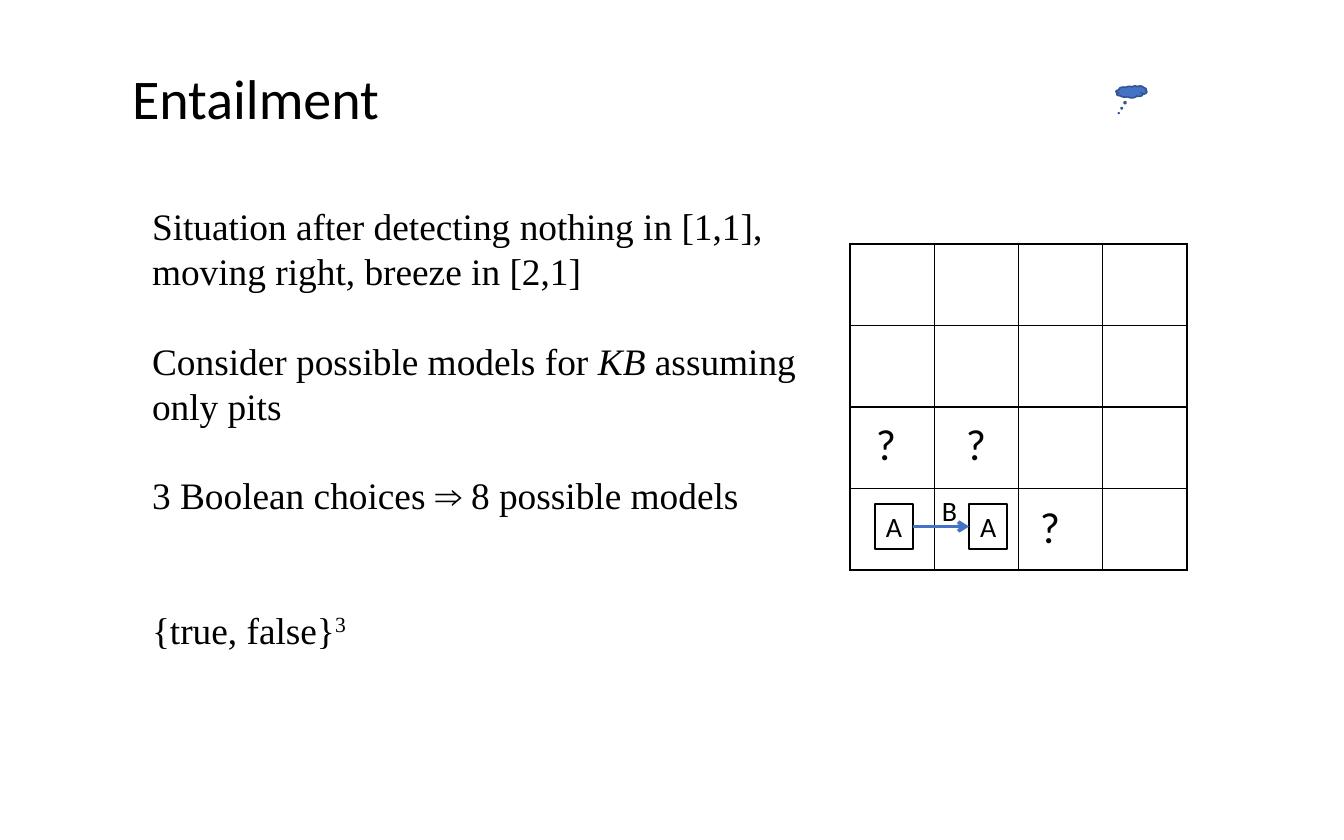
from dataclasses import dataclass

from lxml import etree
from pptx import Presentation
from pptx import util as u
from pptx.dml.color import RGBColor
from pptx.enum import shapes, text
from pptx.oxml.ns import qn

PX = 914400 / 112  # EMU per px


@dataclass(frozen=True)
class Theme:
    ink: str = "000000"
    paper: str = "FFFFFF"
    accent: str = "4472C4"
    accent_edge: str = "325491"
    sans: str = "Calibri"
    serif: str = "Times New Roman"
    title: int = 36
    body: int = 24
    label: int = 18
    mark: int = 28
    body_pitch: float = 28.8


def px(*lengths):
    return [u.Emu(round(length * PX)) for length in lengths]


def write(paragraph, words, size, font, color, italic=False, raised=False):
    run = paragraph.add_run()
    run.text = words
    run.font.size = u.Pt(size)
    run.font.name = font
    run.font.color.rgb = RGBColor.from_string(color)
    if italic:
        run.font.italic = True
    if raised:
        run.font._element.set("baseline", "30000")


class SlideBuilder:
    def __init__(self, slide, theme):
        self.shapes = slide.shapes
        self.theme = theme

    def fit(self, shape, wrap=True):
        frame = shape.text_frame
        frame.word_wrap = wrap
        frame.auto_size = text.MSO_AUTO_SIZE.SHAPE_TO_FIT_TEXT
        frame.vertical_anchor = text.MSO_ANCHOR.TOP
        return frame

    def text_line(self, box, words, size, wrap=True):
        frame = self.fit(self.shapes.add_textbox(*px(*box)), wrap)
        write(frame.paragraphs[0], words, size, self.theme.sans, self.theme.ink)

    def body(self, box, statements):
        """Each statement is (blank lines above, [(words, run format), ...])."""
        t = self.theme
        frame = self.fit(self.shapes.add_textbox(*px(*box)))
        for i, (lines_above, runs) in enumerate(statements):
            paragraph = frame.add_paragraph() if i else frame.paragraphs[0]
            paragraph.line_spacing = u.Pt(t.body_pitch)
            if lines_above:
                paragraph.space_before = u.Pt(lines_above * t.body_pitch)
            for words, style in runs:
                write(paragraph, words, t.body, t.serif, t.ink, **style)

    def shape(self, kind, box, edge, width, fill=None):
        shape = self.shapes.add_shape(kind, *px(*box))
        shape.shadow.inherit = False
        if fill:
            shape.fill.solid()
            shape.fill.fore_color.rgb = RGBColor.from_string(fill)
        else:
            shape.fill.background()
        shape.line.color.rgb = RGBColor.from_string(edge)
        shape.line.width = u.Pt(width)
        return shape

    def tile(self, box, words, size, edge):
        tile = self.shape(shapes.MSO_SHAPE.RECTANGLE, box, edge, 0.75)
        paragraph = self.fit(tile).paragraphs[0]
        paragraph.alignment = text.PP_ALIGN.LEFT
        write(paragraph, words, size, self.theme.sans, self.theme.ink)
        return tile

    def thought(self, box, tail):
        t = self.theme
        cloud = self.shape(shapes.MSO_SHAPE.CLOUD_CALLOUT, box,
                           t.accent_edge, 1, t.accent)
        for i, offset in enumerate(tail):
            cloud.adjustments[i] = offset

    def grid(self, box, rows, columns):
        board = self.shapes.add_table(rows, columns, *px(*box)).table
        board.first_row = False
        board.horz_banding = False
        for row in board.rows:
            for cell in row.cells:
                cell.fill.solid()
                cell.fill.fore_color.rgb = RGBColor.from_string(self.theme.paper)
                self.border(cell)

    def border(self, cell):
        props = cell._tc.get_or_add_tcPr()
        for i, side in enumerate(("lnL", "lnR", "lnT", "lnB")):
            line = etree.Element(qn(f"a:{side}"), w=str(u.Pt(1)))
            fill = etree.SubElement(line, qn("a:solidFill"))
            etree.SubElement(fill, qn("a:srgbClr"), val=self.theme.ink)
            props.insert(i, line)

    def arrow(self, start, end):
        """Join the right side of start to the left side of end."""
        arrow = self.shapes.add_connector(
            shapes.MSO_CONNECTOR.STRAIGHT, start.left + start.width,
            start.top + start.height // 2, end.left, end.top + end.height // 2)
        arrow.begin_connect(start, 3)
        arrow.end_connect(end, 1)
        arrow.line.color.rgb = RGBColor.from_string(self.theme.accent)
        arrow.line.width = u.Pt(2.25)
        etree.SubElement(arrow.line._get_or_add_ln(), qn("a:tailEnd"), type="arrow")
        etree.SubElement(arrow._element.spPr, qn("a:effectLst"))


def main():
    theme = Theme()
    deck = Presentation()
    deck.slide_width, deck.slide_height = px(1344, 840)
    page = SlideBuilder(deck.slides.add_slide(deck.slide_layouts[6]), theme)

    page.text_line((121, 58, 272, 80), "Entailment", theme.title, wrap=False)
    page.body((141, 198, 674, 464), [
        (0, [("Situation after detecting nothing in [1,1], "
              "moving right, breeze in [2,1]", {})]),
        (1, [("Consider possible models for ", {}), ("KB", {"italic": True}),
             (" assuming only pits", {})]),
        (1, [("3 Boolean choices ⇒ 8 possible models", {})]),
        (2, [("{true, false}", {}), ("3", {"raised": True})]),
    ])
    page.thought((1116, 86, 31, 12), (-0.41, 1.77))

    page.grid((850, 244, 337, 326), 4, 4)
    page.text_line((931, 488, 38, 45), "B", theme.label)
    before, after = [page.tile((x, 504, 38, 45), "A", theme.label, theme.ink)
                     for x in (875, 969)]
    page.arrow(before, after)
    for x, y in ((1029, 494), (865, 411), (955, 411)):
        page.tile((x, y, 38, 64), "?", theme.mark, theme.paper)

    deck.save("out.pptx")


if __name__ == "__main__":
    main()
